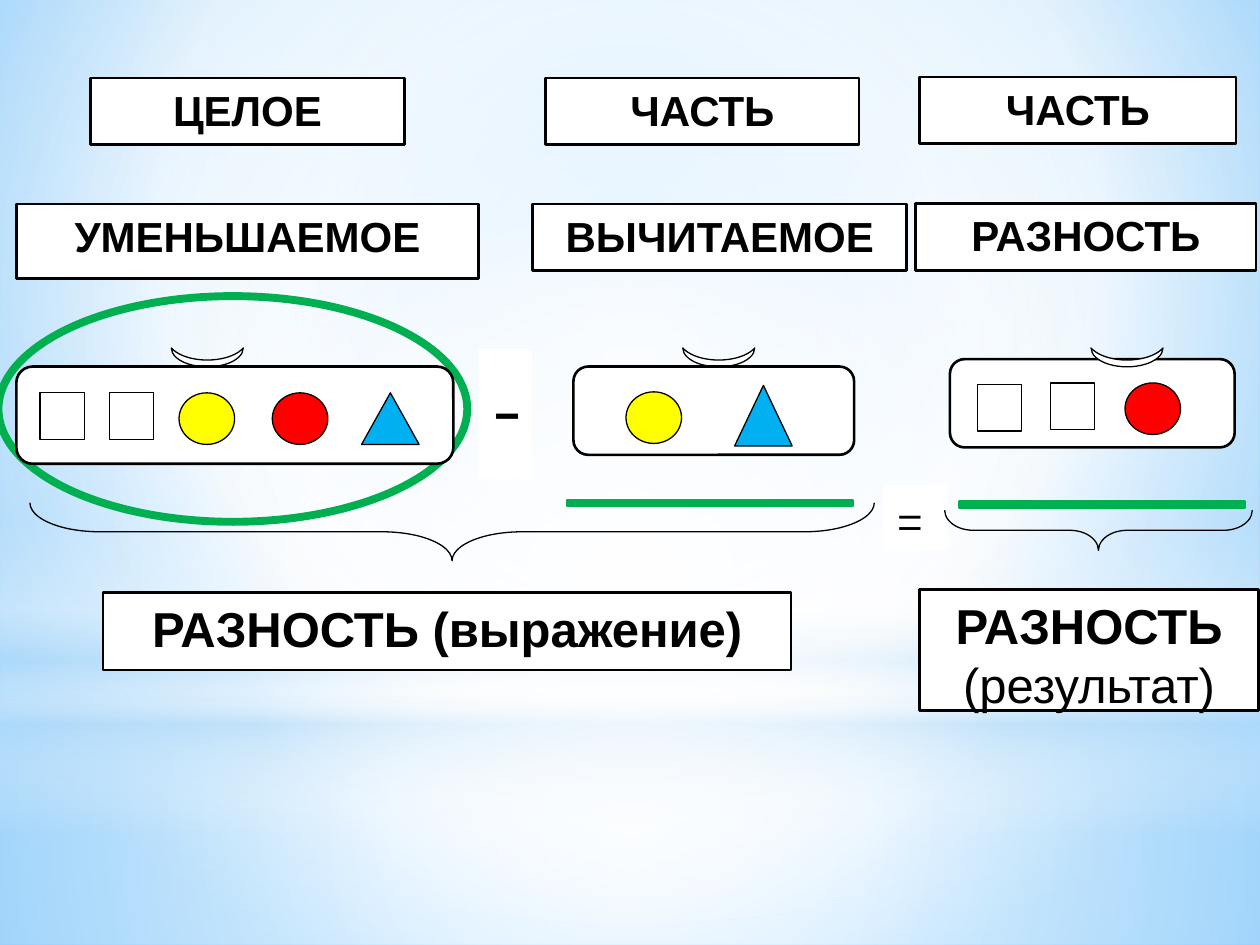
from pptx import Presentation
from pptx.dml.color import RGBColor
from pptx.enum.shapes import MSO_SHAPE
from pptx.enum.text import MSO_ANCHOR, PP_ALIGN
from pptx.oxml import parse_xml
from pptx.oxml.ns import nsdecls
from pptx.util import Cm, Pt

RECTANGLE = MSO_SHAPE.RECTANGLE
ROUNDED = MSO_SHAPE.ROUNDED_RECTANGLE
OVAL = MSO_SHAPE.OVAL
TRIANGLE = MSO_SHAPE.ISOSCELES_TRIANGLE
MOON = MSO_SHAPE.MOON
BRACE = MSO_SHAPE.LEFT_BRACE
CENTER = PP_ALIGN.CENTER
LEFT = PP_ALIGN.LEFT
TOP = MSO_ANCHOR.TOP

BLACK, WHITE, GREEN = "000000", "FFFFFF", "00B050"
YELLOW, RED, BLUE = "FFFF00", "FF0000", "00B0F0"
PALE = "B4DCFA"
WIDTH, HEIGHT = 25.4, 19.05
MIDDLE = (50, 50, 50, 50)


def color(value):
    return RGBColor.from_string(value)


def gradient(stops, center=None):
    stop_xml = "".join(
        f'<a:gs pos="{position * 1000}"><a:srgbClr val="{value}">'
        f'<a:alpha val="{opacity * 1000}"/></a:srgbClr></a:gs>'
        for position, value, opacity in stops
    )
    if center:
        left, top, right, bottom = (side * 1000 for side in center)
        direction = (
            f'<a:path path="circle"><a:fillToRect l="{left}" t="{top}" '
            f'r="{right}" b="{bottom}"/></a:path>'
        )
    else:
        direction = '<a:lin ang="5400000" scaled="0"/>'
    return parse_xml(
        f'<a:gradFill {nsdecls("a")} rotWithShape="1">'
        f"<a:gsLst>{stop_xml}</a:gsLst>{direction}</a:gradFill>"
    )


def apply_gradient(fill, parent, stops, center=None):
    fill.solid()
    solid = parent.find(".//{*}solidFill")
    solid.getparent().replace(solid, gradient(stops, center))


def format_box(shape, fill, line, weight):
    if fill:
        shape.fill.solid()
        shape.fill.fore_color.rgb = color(fill)
    else:
        shape.fill.background()
    if line:
        shape.line.color.rgb = color(line)
        shape.line.width = Pt(weight)
    else:
        shape.line.fill.background()


def add_figure(slide, kind, frame, fill=None, line=BLACK, weight=0.75,
               rotation=0, adjustments=()):
    shape = slide.shapes.add_shape(kind, *map(Cm, frame))
    shape.shadow.inherit = False
    format_box(shape, fill, line, weight)
    shape.rotation = rotation
    for index, value in enumerate(adjustments):
        shape.adjustments[index] = value
    return shape


def add_label(slide, frame, lines, size, font="Arial", line=BLACK, alignment=CENTER):
    box = slide.shapes.add_textbox(*map(Cm, frame))
    format_box(box, WHITE, line, 1.5)
    text_frame = box.text_frame
    text_frame.word_wrap = True
    text_frame.vertical_anchor = TOP
    for index, (text, bold) in enumerate(lines):
        paragraph = text_frame.paragraphs[0] if index == 0 else text_frame.add_paragraph()
        paragraph.alignment = alignment
        run = paragraph.add_run()
        run.text = text
        run.font.name = font
        run.font.size = Pt(size)
        run.font.bold = bold
        run.font.color.rgb = color(BLACK)


def add_sign(slide, frame, text, size):
    add_label(slide, frame, [(text, False)], size, "Montserrat", None, LEFT)


def add_card(slide, frame):
    add_figure(slide, ROUNDED, frame, WHITE, weight=1.5, adjustments=[0.167])


def add_square(slide, left, top):
    add_figure(slide, RECTANGLE, (left, top, 0.89, 0.94), WHITE)


def add_circle(slide, left, top, fill):
    add_figure(slide, OVAL, (left, top, 1.12, 1.04), fill)


def add_triangle(slide, left, top, height):
    add_figure(slide, TRIANGLE, (left, top, 1.16, height), BLUE)


def add_background(slide):
    background = slide.background
    apply_gradient(background.fill, slide.element,
                   [(0, "9ED5FF", 100), (60, WHITE, 100), (100, "5BB9FF", 100)],
                   (20, 10, 20, 60))
    layers = [
        (RECTANGLE, 14.17, 4.88, [(0, WHITE, 91), (37, WHITE, 76), (100, PALE, 79)], MIDDLE),
        (RECTANGLE, 0, 14.17, [(0, WHITE, 89), (48, WHITE, 62), (100, PALE, 79)], MIDDLE),
        (RECTANGLE, 10.46, 6.35,
         [(0, WHITE, 0), (29, WHITE, 30), (45, PALE, 40),
          (55, WHITE, 26), (65, PALE, 60), (100, WHITE, 0)], None),
        (OVAL, 4.45, 14.17, [(0, WHITE, 100), (56, WHITE, 0)], MIDDLE),
    ]
    for kind, top, height, stops, center in layers:
        layer = add_figure(slide, kind, (0, top, WIDTH, height), line=None)
        apply_gradient(layer.fill, layer.element.spPr, stops, center)


def add_labels(slide):
    headings = [
        ("ЦЕЛОЕ", 1.83, 1.57, 6.32, 1.35),
        ("ВЫЧИТАЕМОЕ", 10.74, 4.11, 7.54, 1.35),
        ("РАЗНОСТЬ", 18.46, 4.1, 6.86, 1.35),
        ("ЧАСТЬ", 18.54, 1.55, 6.38, 1.35),
        ("ЧАСТЬ", 11, 1.57, 6.32, 1.35),
        ("УМЕНЬШАЕМОЕ", 0.33, 4.11, 9.32, 1.5),
    ]
    for text, *frame in headings:
        add_label(slide, frame, [(text, True)], 24)
    add_label(slide, (18.54, 11.89, 6.83, 2.44),
              [("РАЗНОСТЬ", True), ("(результат)", False)], 28)
    add_label(slide, (2.08, 11.94, 13.87, 1.57), [("РАЗНОСТЬ (выражение)", True)], 28)


def add_marks(slide):
    for frame, curve in [((8.53, 2.21, 1.17, 17.02), 1.205),
                         ((21.74, 7.59, 0.81, 6.2), 0.713)]:
        add_figure(slide, BRACE, frame, rotation=270, adjustments=[curve, 0.5])
    for left, top in [(11.43, 10.08), (19.33, 10.11)]:
        add_figure(slide, RECTANGLE, (left, top, 5.77, 0.13), GREEN, GREEN, 1.25)
    add_figure(slide, OVAL, (-0.03, 5.97, 9.45, 4.55), line=GREEN, weight=4.5)


def add_tokens(slide):
    for left, top in [(0.81, 7.92), (2.21, 7.92), (21.18, 7.72), (19.71, 7.75)]:
        add_square(slide, left, top)
    for left, top, fill in [(3.61, 7.92, YELLOW), (12.62, 7.9, YELLOW),
                            (5.49, 7.92, RED), (22.68, 7.72, RED)]:
        add_circle(slide, left, top, fill)
    add_triangle(slide, 7.29, 7.92, 1.04)
    add_triangle(slide, 14.81, 7.77, 1.22)


def main():
    presentation = Presentation()
    presentation.slide_width = Cm(WIDTH)
    presentation.slide_height = Cm(HEIGHT)
    slide = presentation.slides.add_slide(presentation.slide_layouts[6])
    add_background(slide)
    add_card(slide, (19.15, 7.24, 5.74, 1.78))
    add_sign(slide, (9.65, 7.04, 1.07, 2.62), "-", 48)
    add_sign(slide, (17.81, 9.78, 1.3, 1.32), "=", 28)
    for left in (3.99, 22.53, 14.3):
        add_figure(slide, MOON, (left, 6.48, 0.38, 1.45), WHITE,
                   rotation=270, adjustments=[0.36])
    add_labels(slide)
    add_marks(slide)
    add_card(slide, (0.33, 7.39, 8.81, 1.96))
    add_card(slide, (11.56, 7.39, 5.66, 1.78))
    add_tokens(slide)
    presentation.save("out.pptx")


if __name__ == "__main__":
    main()
